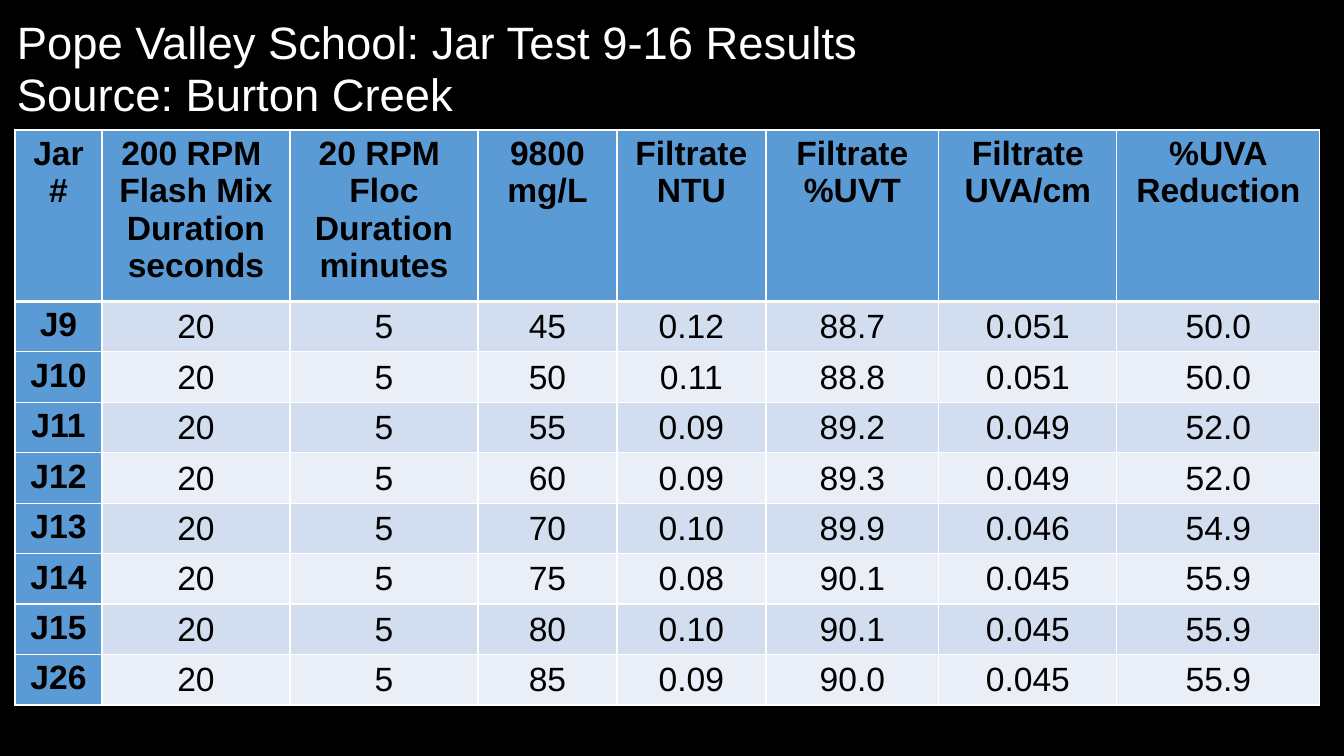
import pptx
import pptx.dml.color
import pptx.enum.text
import pptx.oxml
import pptx.oxml.ns
import pptx.util

TITLE = "Pope Valley School: Jar Test 9-16 Results \vSource: Burton Creek"
HEADER = [
    "Jar\n#",
    "200 RPM \nFlash Mix\nDuration\nseconds",
    "20 RPM \nFloc\nDuration\nminutes",
    "9800\nmg/L",
    "Filtrate\nNTU",
    "Filtrate\n%UVT",
    "Filtrate\nUVA/cm",
    "%UVA\nReduction",
]
JARS = [
    ("J9", "20", "5", "45", "0.12", "88.7", "0.051", "50.0"),
    ("J10", "20", "5", "50", "0.11", "88.8", "0.051", "50.0"),
    ("J11", "20", "5", "55", "0.09", "89.2", "0.049", "52.0"),
    ("J12", "20", "5", "60", "0.09", "89.3", "0.049", "52.0"),
    ("J13", "20", "5", "70", "0.10", "89.9", "0.046", "54.9"),
    ("J14", "20", "5", "75", "0.08", "90.1", "0.045", "55.9"),
    ("J15", "20", "5", "80", "0.10", "90.1", "0.045", "55.9"),
    ("J26", "20", "5", "85", "0.09", "90.0", "0.045", "55.9"),
]
COLUMN_WIDTHS = [87, 188, 188, 139, 149, 173, 178, 203]
HEADER_HEIGHT, JAR_HEIGHT = 160, 47
TABLE_LEFT, TABLE_TOP = 15, 130
BLACK, WHITE, BLUE = "000000", "FFFFFF", "5B9BD5"
BANDS = ["D2DEEF", "EAEFF7"]
MIDDLE = pptx.enum.text.MSO_ANCHOR.MIDDLE
TOP = pptx.enum.text.MSO_ANCHOR.TOP
CENTER = pptx.enum.text.PP_ALIGN.CENTER
LEFT = pptx.enum.text.PP_ALIGN.LEFT


def px(length):
    return pptx.util.Emu(round(length * 914400 / 100.8))


def color(value):
    return pptx.dml.color.RGBColor.from_string(value)


def write(frame, text, size, ink, bold=False, align=LEFT, spacing=1.0):
    frame.text = text
    for para in frame.paragraphs:
        para.alignment = align
        para.line_spacing = spacing
        for span in para.runs:
            span.font.name = "Arial"
            span.font.size = pptx.util.Pt(size)
            span.font.bold = bold
            span.font.color.rgb = color(ink)


def add_borders(cell, top, bottom):
    """Draw white cell borders; top and bottom are widths in points."""
    properties = cell._tc.get_or_add_tcPr()
    for side, points in (("L", 1), ("R", 1), ("T", top), ("B", bottom)):
        properties.append(pptx.oxml.parse_xml(
            f'<a:ln{side} {pptx.oxml.ns.nsdecls("a")} w="{pptx.util.Pt(points)}">'
            f'<a:solidFill><a:srgbClr val="{WHITE}"/></a:solidFill></a:ln{side}>'))


def add_title(page):
    box = page.shapes.add_textbox(px(7), px(12), px(1313), px(115))
    box.text_frame.word_wrap = True
    box.text_frame.vertical_anchor = MIDDLE
    write(box.text_frame, TITLE, size=32.4, ink=WHITE, spacing=0.96)


def add_results(page):
    rows = [HEADER] + JARS
    height = HEADER_HEIGHT + JAR_HEIGHT * len(JARS)
    table = page.shapes.add_table(
        len(rows), len(HEADER), px(TABLE_LEFT), px(TABLE_TOP),
        px(sum(COLUMN_WIDTHS)), px(height)).table
    table.first_col = True
    for column, width in zip(table.columns, COLUMN_WIDTHS):
        column.width = px(width)
    for r, texts in enumerate(rows):
        table.rows[r].height = px(JAR_HEIGHT if r else HEADER_HEIGHT)
        for c, text in enumerate(texts):
            cell = table.cell(r, c)
            is_label = r == 0 or c == 0
            add_borders(cell, top=3 if r == 1 else 1, bottom=1 if r else 3)
            cell.fill.solid()
            cell.fill.fore_color.rgb = color(BLUE if is_label else BANDS[(r - 1) % 2])
            cell.vertical_anchor = TOP if is_label else MIDDLE
            if not is_label:
                cell.margin_left = cell.margin_right = cell.margin_top = px(1)
                cell.margin_bottom = 0
            write(cell.text_frame, text, size=24, ink=BLACK, bold=is_label, align=CENTER)


def main():
    deck = pptx.Presentation()
    deck.slide_width, deck.slide_height = px(1344), px(756)
    page = deck.slides.add_slide(deck.slide_layouts[6])
    page.background.fill.solid()
    page.background.fill.fore_color.rgb = color(BLACK)
    add_title(page)
    add_results(page)
    deck.save("out.pptx")


if __name__ == "__main__":
    main()
